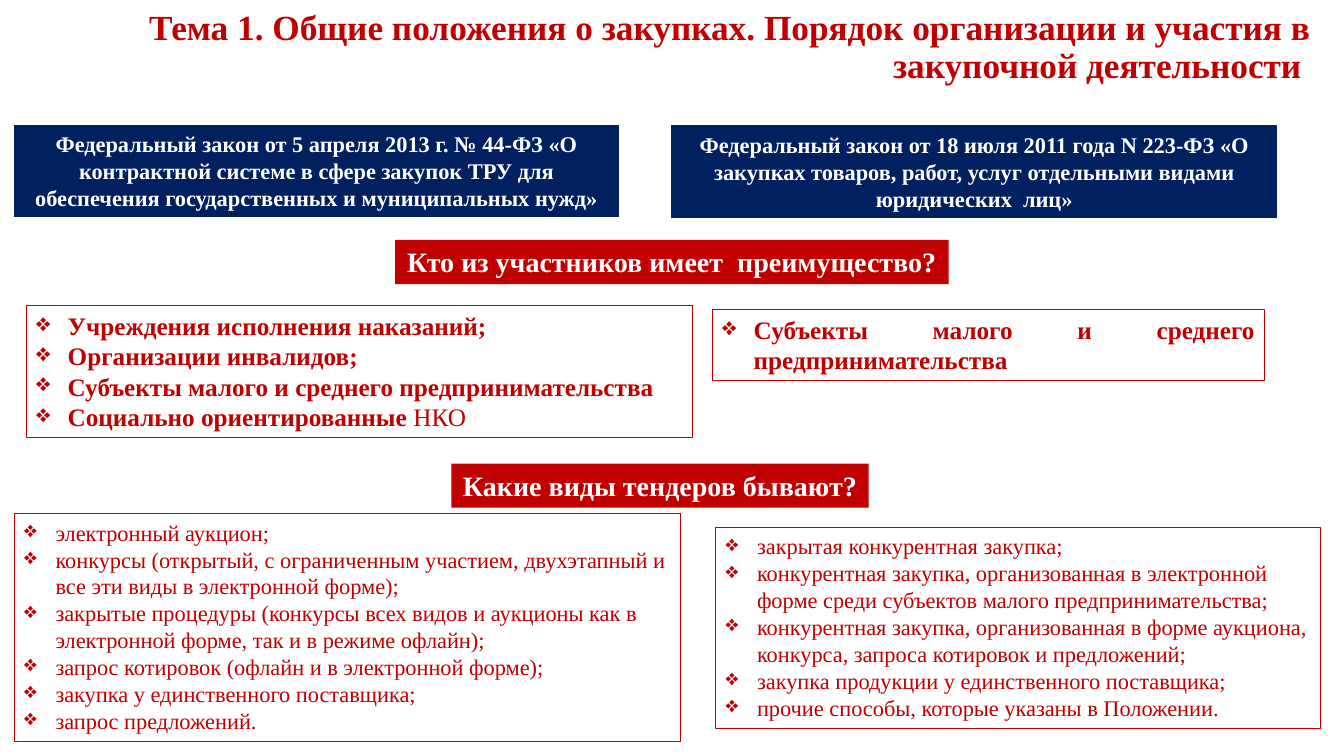
"""Build a slide comparing the two Russian procurement laws."""
from dataclasses import dataclass
from typing import Any, Optional

from lxml import etree
from pptx import Presentation
from pptx import util as u
from pptx.dml import color as c
from pptx.enum import shapes, text
from pptx.oxml import ns

RED, NAVY, WHITE = "C00000", "002060", "FFFFFF"
FONT = "Times New Roman"
INDENT = 22.5
LEFT, CENTER = text.PP_ALIGN.LEFT, text.PP_ALIGN.CENTER
RIGHT, JUSTIFY = text.PP_ALIGN.RIGHT, text.PP_ALIGN.JUSTIFY


@dataclass(frozen=True)
class Style:
    size: float
    ink: str
    fill: Optional[str] = None
    line: Optional[str] = None
    bold: bool = True
    align: Any = CENTER
    wrap: bool = True
    bullet: bool = False
    spacing: float = 1.0
    autosize: Any = text.MSO_AUTO_SIZE.SHAPE_TO_FIT_TEXT


@dataclass(frozen=True)
class Box:
    style: Style
    left: float
    top: float
    width: float
    height: float
    lines: tuple[str, ...]
    plain_ending: str = ""


TITLE = Style(25.2, RED, align=RIGHT, spacing=0.9, autosize=text.MSO_AUTO_SIZE.NONE)
LAW = Style(16, WHITE, fill=NAVY, line=NAVY)
QUESTION = Style(20, WHITE, fill=RED, wrap=False)
ADVANTAGES = Style(18, RED, line=RED, align=JUSTIFY, bullet=True)
TENDERS = Style(16, RED, line=RED, bold=False, align=LEFT, bullet=True)

BOXES = (
    Box(TITLE, 0, 10.8, 943.2, 46.8, (
        "Тема 1. Общие положения о закупках. Порядок организации и участия в закупочной деятельности ",
    )),
    Box(LAW, 10.1, 89.5, 432, 65.5, (
        "Федеральный закон от 5 апреля 2013 г. № 44-ФЗ «О контрактной системе в сфере закупок ТРУ "
        "для обеспечения государственных и муниципальных нужд»",
    )),
    Box(LAW, 479.9, 90, 432, 65.5, (
        "Федеральный закон от 18 июля 2011 года N 223-ФЗ «О закупках товаров, работ, услуг "
        "отдельными видами юридических  лиц»",
    )),
    Box(QUESTION, 282.3, 171.4, 395.3, 31.5, ("Кто из участников имеет  преимущество?",)),
    Box(ADVANTAGES, 18.8, 218.2, 476, 94.5, (
        "Учреждения исполнения наказаний;",
        "Организации инвалидов;",
        "Субъекты малого и среднего предпринимательства",
        "Социально ориентированные",
    ), " НКО"),
    Box(ADVANTAGES, 508.8, 221, 394.5, 50.9, ("Субъекты малого и среднего предпринимательства",)),
    Box(QUESTION, 322.5, 331.2, 298, 31.5, ("Какие виды тендеров бывают?",)),
    Box(TENDERS, 10.1, 367, 476, 162.9, (
        "электронный аукцион;",
        "конкурсы (открытый, с ограниченным участием, двухэтапный и все эти виды в электронной форме);",
        "закрытые процедуры (конкурсы всех видов и аукционы как в электронной форме, так и в режиме офлайн);",
        "запрос котировок (офлайн и в электронной форме);",
        "закупка у единственного поставщика;",
        "запрос предложений.",
    )),
    Box(TENDERS, 511.2, 376.8, 432, 143.5, (
        "закрытая конкурентная закупка;",
        "конкурентная закупка, организованная в электронной форме среди субъектов малого предпринимательства;",
        "конкурентная закупка, организованная в форме аукциона, конкурса, запроса котировок и предложений;",
        "закупка продукции у единственного поставщика;",
        "прочие способы, которые указаны в Положении.",
    )),
)


def rgb(value: str) -> c.RGBColor:
    """Turn a hex string into a colour."""
    return c.RGBColor.from_string(value)


def apply(target: Any, values: dict[str, Any]) -> None:
    """Set each attribute named in values."""
    for name, value in values.items():
        setattr(target, name, value)


def paint(shape: Any, style: Style) -> None:
    """Give a shape its fill and outline."""
    shape.shadow.inherit = False
    for part, value in ((shape.fill, style.fill), (shape.line.fill, style.line)):
        if value:
            part.solid()
            part.fore_color.rgb = rgb(value)
        else:
            part.background()
    if style.line:
        shape.line.width = u.Pt(0.75)


def add_bullet(paragraph: Any) -> None:
    """Give a paragraph a diamond bullet with a hanging indent."""
    properties = paragraph._p.get_or_add_pPr()
    properties.set("marL", str(u.Pt(INDENT)))
    properties.set("indent", str(-u.Pt(INDENT)))
    etree.SubElement(properties, ns.qn("a:buChar")).set("char", "❖")


def add_run(paragraph: Any, wording: str, style: Style, bold: bool) -> None:
    """Append a formatted run."""
    run = paragraph.add_run()
    run.text = wording
    apply(run.font, {"name": FONT, "size": u.Pt(style.size), "bold": bold})
    run.font.color.rgb = rgb(style.ink)


def draw_box(slide: Any, box: Box) -> None:
    """Draw one box with its paragraphs."""
    style = box.style
    frame = [u.Pt(value) for value in (box.left, box.top, box.width, box.height)]
    shape = slide.shapes.add_shape(shapes.MSO_SHAPE.RECTANGLE, *frame)
    paint(shape, style)
    apply(shape.text_frame, {
        "word_wrap": style.wrap,
        "auto_size": style.autosize,
        "vertical_anchor": text.MSO_ANCHOR.MIDDLE if style is TITLE else text.MSO_ANCHOR.TOP,
    })
    for index, line in enumerate(box.lines):
        paragraph = shape.text_frame.add_paragraph() if index else shape.text_frame.paragraphs[0]
        apply(paragraph, {"alignment": style.align, "line_spacing": style.spacing})
        if style.bullet:
            add_bullet(paragraph)
        add_run(paragraph, line, style, style.bold)
    if box.plain_ending:
        add_run(paragraph, box.plain_ending, style, False)


def main() -> None:
    """Create and save the presentation."""
    presentation = Presentation()
    apply(presentation, {"slide_width": u.Pt(960), "slide_height": u.Pt(540)})
    slide = presentation.slides.add_slide(presentation.slide_layouts[6])
    for box in BOXES:
        draw_box(slide, box)
    presentation.save("out.pptx")


if __name__ == "__main__":
    main()
